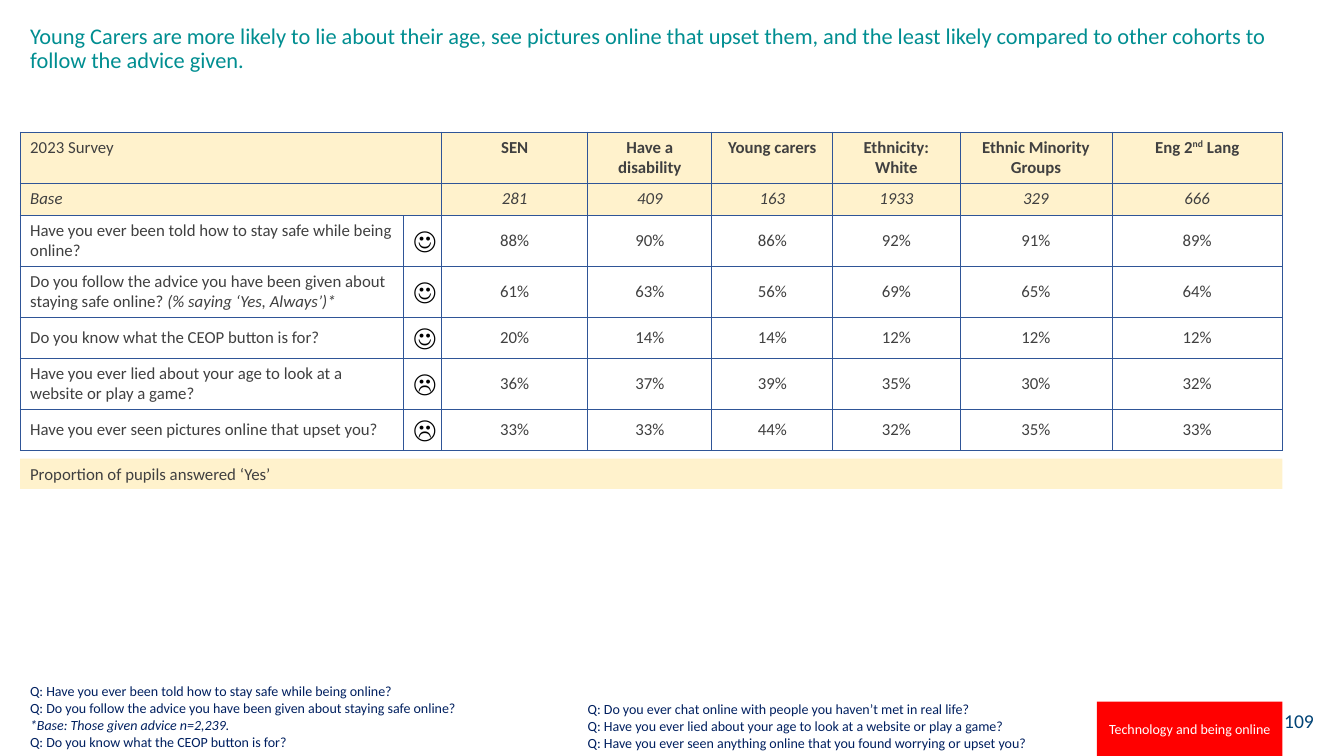
from lxml import etree
from pptx import Presentation
from pptx.dml.color import RGBColor
from pptx.enum.shapes import MSO_SHAPE
from pptx.enum.text import MSO_ANCHOR as ANCHOR, PP_ALIGN as ALIGN
from pptx.oxml import parse_xml
from pptx.oxml.ns import nsdecls
from pptx.util import Inches, Pt

COLORS = {
    "title": "008E91", "text": "404040", "cream": "FFF2CC", "border": "2F5597",
    "navy": "002060", "number": "004376", "red": "FF0000", "white": "FFFFFF",
    "face": "000000",
}


def add_run(paragraph, text, size, color, bold=False, italic=False):
    run = paragraph.add_run()
    run.text = text
    run.font.name = "Calibri"
    run.font.size = Pt(size)
    run.font.bold = bold
    run.font.italic = italic
    run.font.color.rgb = RGBColor.from_string(COLORS[color])
    return run


def add_band(left, top, width, height, fill, text, size, color, align, anchor):
    """Add a filled rectangle without outline that holds one line of text."""
    band = slide.shapes.add_shape(
        MSO_SHAPE.RECTANGLE, Inches(left), Inches(top), Inches(width), Inches(height))
    band.shadow.inherit = False
    band.fill.solid()
    band.fill.fore_color.rgb = RGBColor.from_string(COLORS[fill])
    band.line.fill.background()
    band.text_frame.vertical_anchor = anchor
    band.text_frame.word_wrap = True
    line = band.text_frame.paragraphs[0]
    line.alignment = align
    add_run(line, text, size, color)


prs = Presentation()
prs.slide_width, prs.slide_height = Inches(13.33), Inches(7.5)
slide = prs.slides.add_slide(prs.slide_layouts[5])

# Title and page number
headline = slide.shapes.title
headline.left, headline.top = Inches(0.2), Inches(0.2)
headline.width, headline.height = Inches(12.77), Inches(0.98)
headline.text_frame.vertical_anchor = ANCHOR.TOP
headline_line = headline.text_frame.paragraphs[0]
headline_line.alignment = ALIGN.LEFT
headline_line.line_spacing = 0.9
add_run(headline_line,
        "Young Carers are more likely to lie about their age, see pictures online that "
        "upset them, and the least likely compared to other cohorts to follow the "
        "advice given.", 16, "title")
add_band(12.54, 6.95, 0.59, 0.4, "white", "109", 14, "number", ALIGN.RIGHT, ANCHOR.MIDDLE)

# Survey table
SURVEY = [
    ["2023 Survey", "", "SEN", "Have a disability", "Young carers", "Ethnicity: White",
     "Ethnic Minority Groups", "Eng 2|nd| Lang"],
    ["Base", "", "281", "409", "163", "1933", "329", "666"],
    ["Have you ever been told how to stay safe while being online?", "☺",
     "88%", "90%", "86%", "92%", "91%", "89%"],
    ["Do you follow the advice you have been given about staying safe online?"
     "| (% saying ‘Yes, Always’)*", "☺", "61%", "63%", "56%", "69%", "65%", "64%"],
    ["Do you know what the CEOP button is for?", "☺",
     "20%", "14%", "14%", "12%", "12%", "12%"],
    ["Have you ever lied about your age to look at a website or play a game?", "☹",
     "36%", "37%", "39%", "35%", "30%", "32%"],
    ["Have you ever seen pictures online that upset you?", "☹",
     "33%", "33%", "44%", "32%", "35%", "33%"],
]
COLUMN_WIDTHS = [3.8, 0.38, 1.45, 1.23, 1.2, 1.26, 1.51, 1.69]
HEADER, BASE, FACE_COLUMN = 0, 1, 1

survey = slide.shapes.add_table(
    len(SURVEY), len(COLUMN_WIDTHS), Inches(0.2), Inches(1.31),
    Inches(12.52), Inches(2.39)).table
survey.first_row = survey.horz_banding = False
for column, width in zip(survey.columns, COLUMN_WIDTHS):
    column.width = Inches(width)
for r, row in enumerate(survey.rows):
    row.height = Inches(0.47 if r == HEADER else 0.32)

for r, answers in enumerate(SURVEY):
    for c, answer in enumerate(answers):
        cell = survey.cell(r, c)
        cell.vertical_anchor = ANCHOR.TOP if r == HEADER else ANCHOR.MIDDLE
        if r <= BASE:
            cell.fill.solid()
            cell.fill.fore_color.rgb = RGBColor.from_string(COLORS["cream"])
        else:
            cell.fill.background()
        for i, side in enumerate("LRTB"):
            cell._tc.get_or_add_tcPr().insert(i, parse_xml(
                f'<a:ln{side} {nsdecls("a")} w="6350"><a:solidFill>'
                f'<a:srgbClr val="{COLORS["border"]}"/></a:solidFill></a:ln{side}>'))
        if not answer:
            continue
        line = cell.text_frame.paragraphs[0]
        line.alignment = ALIGN.LEFT if c == 0 else ALIGN.CENTER
        is_face = c == FACE_COLUMN
        for part, words in enumerate(answer.split("|")):
            run = add_run(line, words, 18 if is_face else 12,
                          "face" if is_face else "text",
                          bold=r == HEADER and c > 0,
                          italic=r == BASE or (r > BASE and part == 1))
            if words == "nd":
                run.font._element.set("baseline", "30000")
for r in (HEADER, BASE):
    survey.cell(r, 0).merge(survey.cell(r, 1))

# Section tag and table note
add_band(10.88, 6.96, 1.84, 0.54, "red", "Technology and being online", 10, "white",
         ALIGN.CENTER, ANCHOR.MIDDLE)
add_band(0.2, 4.55, 12.52, 0.3, "cream", "Proportion of pupils answered ‘Yes’", 12, "text",
         ALIGN.LEFT, ANCHOR.TOP)

# Question wording at the foot
FOOTNOTES = [
    (0.2, 6.72, 11.46, 0.77, [
        "Q: Have you ever been told how to stay safe while being online?",
        "Q: Do you follow the advice you have been given about staying safe online?",
        "*Base: Those given advice n=2,239.",
        "Q: Do you know what the CEOP button is for?"]),
    (5.73, 6.89, 5.15, 0.61, [
        "Q: Do you ever chat online with people you haven’t met in real life?",
        "Q: Have you ever lied about your age to look at a website or play a game?",
        "Q: Have you ever seen anything online that you found worrying or upset you?"]),
]
for left, top, width, height, questions in FOOTNOTES:
    footnote = slide.shapes.add_textbox(
        Inches(left), Inches(top), Inches(width), Inches(height)).text_frame
    footnote.word_wrap = True
    footnote.vertical_anchor = ANCHOR.BOTTOM
    for i, question in enumerate(questions):
        line = footnote.add_paragraph() if i else footnote.paragraphs[0]
        add_run(line, question, 10, "navy", italic=question.startswith("*"))

prs.save("out.pptx")
